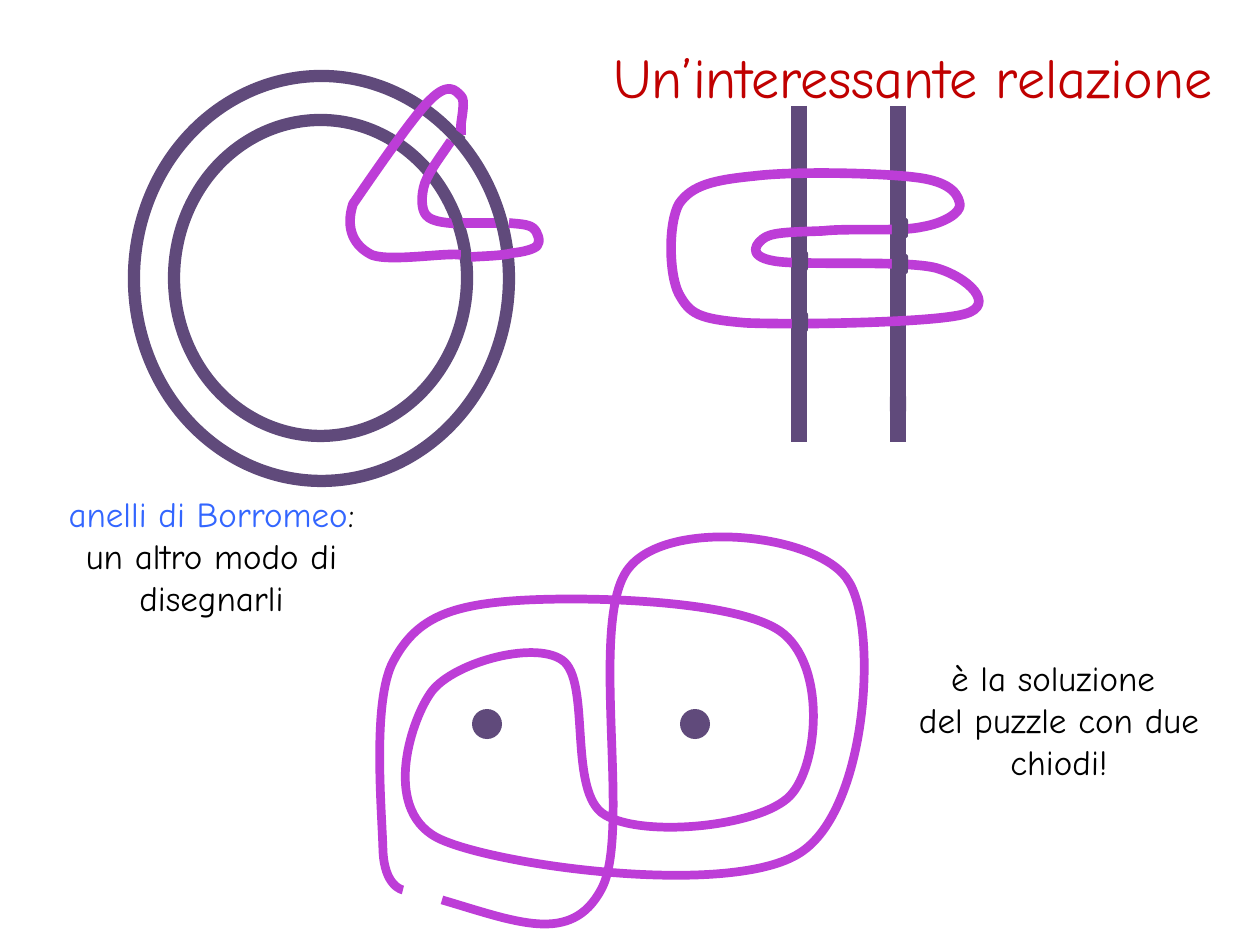
from lxml.etree import Element, SubElement
from pptx import Presentation
from pptx.dml.color import RGBColor
from pptx.enum.shapes import MSO_CONNECTOR as Connector, MSO_SHAPE as Shape
from pptx.enum.text import MSO_ANCHOR as Anchor, PP_ALIGN as Align
from pptx.oxml.ns import qn
from pptx.util import Pt

EMU_PER_PX = 914400 / 126
THEME = {
    "font": "Comic Neue", "title": 32, "body": 20,
    "red": "C00000", "blue": "3366FF", "black": "000000",
    "ring": "604A7B", "cord": "BD3DD7",
    "ring_width": 7, "bar_width": 9.5, "cord_width": 5.5, "loop_width": 5,
}


def px(*lengths):
    return [round(length * EMU_PER_PX) for length in lengths]


def draw_curve(page, start, bends, width, close=False):
    """Draw a cord; each bend is two control points and an end point."""
    points = [bend[i:i + 2] for bend in bends for i in (0, 2, 4)]
    builder = page.shapes.build_freeform(*start, scale=EMU_PER_PX)
    builder.add_line_segments(points, close=close)
    cord = builder.convert_to_shape()
    cord.fill.background()
    cord.shadow.inherit = False
    cord.line.color.rgb = RGBColor.from_string(THEME["cord"])
    cord.line.width = Pt(width)
    # The builder makes straight segments: join every three into one Bezier
    segments = list(cord.element.iter(qn("a:lnTo")))
    for i in range(0, len(segments), 3):
        bezier = Element(qn("a:cubicBezTo"))
        segments[i].addprevious(bezier)
        for segment in segments[i:i + 3]:
            bezier.append(segment[0])
            segment.getparent().remove(segment)


deck = Presentation()
deck.slide_width, deck.slide_height = px(1260, 945)
page = deck.slides.add_slide(deck.slide_layouts[6])

# Text
texts = [
    ((44, 26, 1181, 100), "title", Align.RIGHT, Anchor.MIDDLE,
     [[("Un’interessante relazione", "red")]]),
    ((8, 486, 407, 140), "body", Align.CENTER, Anchor.TOP,
     [[("anelli di Borromeo", "blue"), (":", "black")],
      [("un altro modo di disegnarli", "black")]]),
    ((873, 650, 372, 140), "body", Align.CENTER, Anchor.TOP,
     [[("è la soluzione ", "black")],
      [("del puzzle con due chiodi!", "black")]]),
]
for place, size, align, anchor, lines in texts:
    frame = page.shapes.add_textbox(*px(*place)).text_frame
    for name, value in {"word_wrap": True, "vertical_anchor": anchor}.items():
        setattr(frame, name, value)
    for number, line in enumerate(lines):
        para = frame.add_paragraph() if number else frame.paragraphs[0]
        para.alignment = align
        for words, color in line:
            span = para.add_run()
            span.text = words
            span.font.color.rgb = RGBColor.from_string(THEME[color])
            for name, value in {"name": THEME["font"],
                                "size": Pt(THEME[size])}.items():
                setattr(span.font, name, value)

# Borromean rings: the cord weaves under and over the two rings
ring_places = [(174, 120, 293, 316), (134, 76, 375, 405)]
cords_over_ring = [
    [((451, 141), [(441, 156, 430, 170, 425, 183),
                   (421, 195, 421, 209, 426, 215),
                   (432, 223, 451, 223, 461, 224)]),
     ((461, 223), [(474, 223, 488, 223, 501, 223)])],
    [((509, 223), [(518, 224, 528, 224, 533, 228),
                   (538, 232, 541, 242, 537, 246),
                   (534, 249, 524, 252, 513, 253),
                   (501, 256, 486, 256, 471, 257)]),
     ((461, 255), [(449, 252, 391, 262, 372, 255),
                   (354, 246, 345, 229, 353, 204),
                   (360, 194, 412, 117, 430, 100),
                   (449, 81, 456, 91, 461, 96),
                   (466, 100, 461, 120, 461, 125),
                   (461, 128, 461, 131, 461, 135)])],
]
for place, cords in zip(ring_places, cords_over_ring):
    ring = page.shapes.add_shape(Shape.OVAL, *px(*place))
    ring.fill.background()
    ring.shadow.inherit = False
    ring.line.color.rgb = RGBColor.from_string(THEME["ring"])
    ring.line.width = Pt(THEME["ring_width"])
    for start, bends in cords:
        draw_curve(page, start, bends, THEME["cord_width"])

# Two bars with a cord woven around them
for x in (799, 898):
    bar = page.shapes.add_connector(Connector.STRAIGHT, *px(x, 106, x, 442))
    bar.line.color.rgb = RGBColor.from_string(THEME["ring"])
    bar.line.width = Pt(THEME["bar_width"])
    SubElement(bar.element.spPr, qn("a:effectLst"))
draw_curve(page, (755, 176), [
    (795, 171, 886, 173, 920, 178), (954, 183, 959, 197, 960, 205),
    (960, 213, 945, 223, 922, 227), (900, 232, 849, 228, 823, 231),
    (798, 232, 775, 232, 766, 237), (757, 242, 745, 256, 774, 261),
    (801, 266, 905, 260, 936, 268), (968, 277, 997, 305, 965, 314),
    (934, 323, 794, 325, 746, 323), (698, 319, 690, 314, 679, 294),
    (669, 275, 668, 224, 679, 204), (692, 185, 714, 180, 755, 176),
], THEME["cord_width"], close=True)

# Patches put a ring or bar over the cord; dots are the two nails
solids = [
    (Shape.ROUNDED_RECTANGLE, (447, 131, 18, 8), 36.5),
    (Shape.ROUNDED_RECTANGLE, (449, 247, 30, 6), 87),
    (Shape.ROUNDED_RECTANGLE, (445, 217, 25, 10), 71.6),
]
solids += [(Shape.ROUNDED_RECTANGLE, (x, y, 20, 16), 90) for x, y in
           [(888, 396), (890, 220), (790, 253), (890, 256), (790, 314)]]
solids += [(Shape.OVAL, (x, 709, 30, 30), 0) for x in (472, 680)]
for kind, place, angle in solids:
    solid = page.shapes.add_shape(kind, *px(*place))
    solid.rotation = angle
    solid.shadow.inherit = False
    solid.fill.solid()
    solid.fill.fore_color.rgb = RGBColor.from_string(THEME["ring"])
    solid.line.fill.background()

# Cord around the two nails
draw_curve(page, (403, 890), [
    (403, 890, 384, 887, 383, 849), (382, 811, 372, 702, 393, 662),
    (415, 620, 447, 606, 512, 601), (577, 596, 733, 599, 780, 631),
    (827, 664, 819, 766, 790, 796), (760, 827, 643, 838, 605, 815),
    (567, 793, 592, 680, 562, 660), (533, 640, 449, 664, 430, 694),
    (410, 723, 381, 814, 442, 840), (504, 867, 732, 897, 800, 853),
    (868, 810, 878, 629, 849, 582), (822, 534, 669, 517, 629, 568),
    (587, 619, 633, 834, 601, 890), (571, 945, 517, 922, 442, 900),
], THEME["loop_width"])

deck.save("out.pptx")
